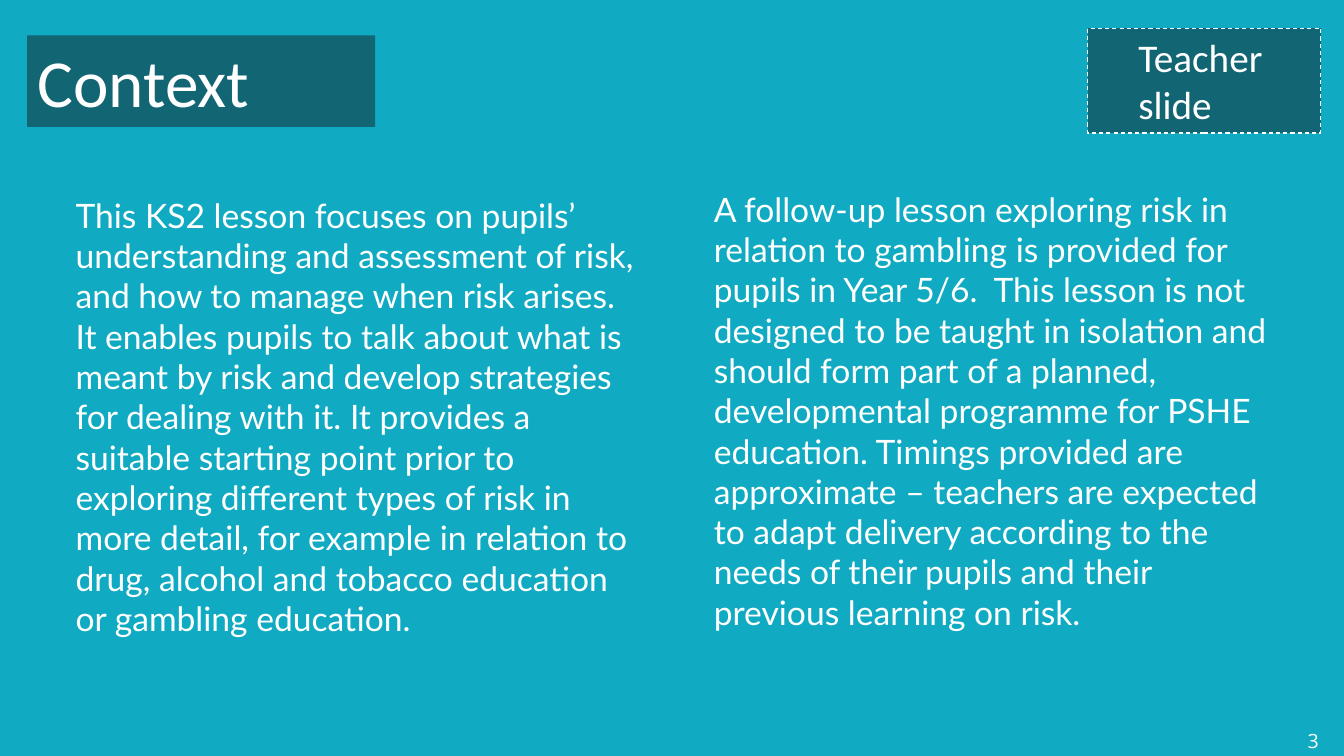
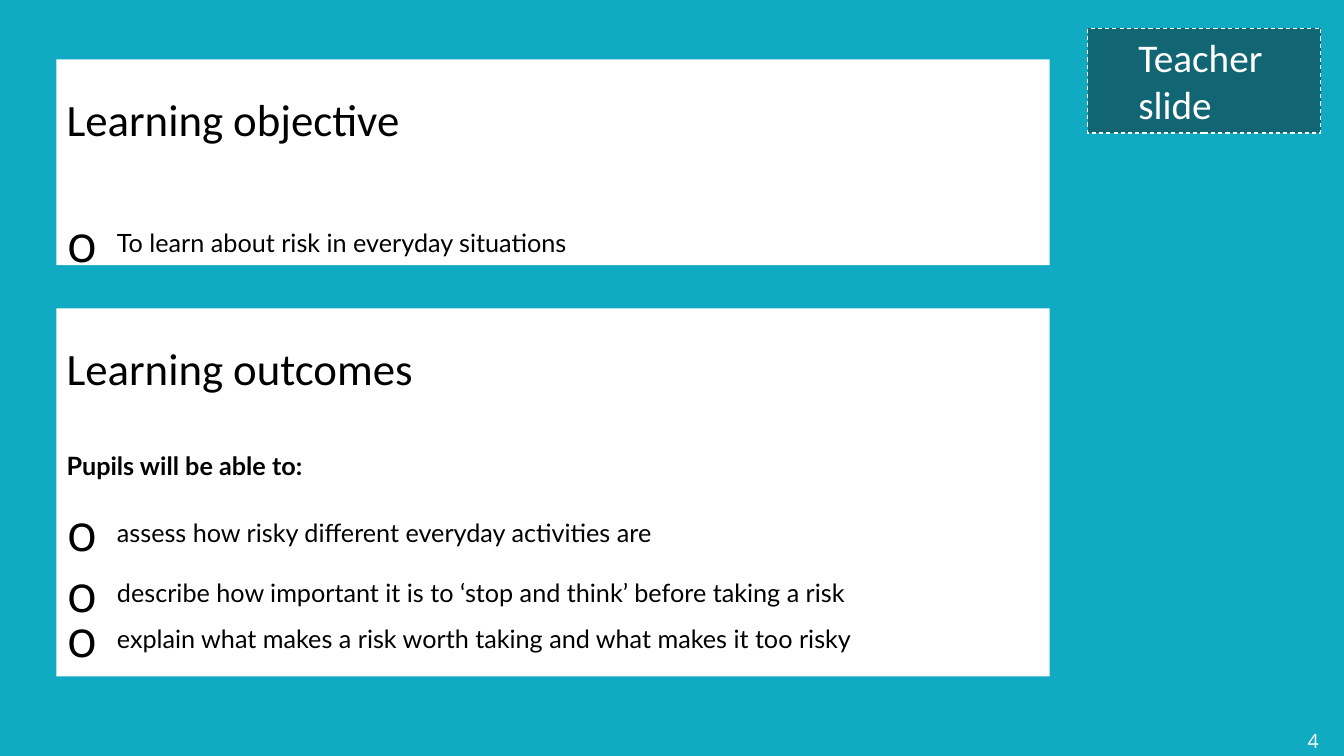
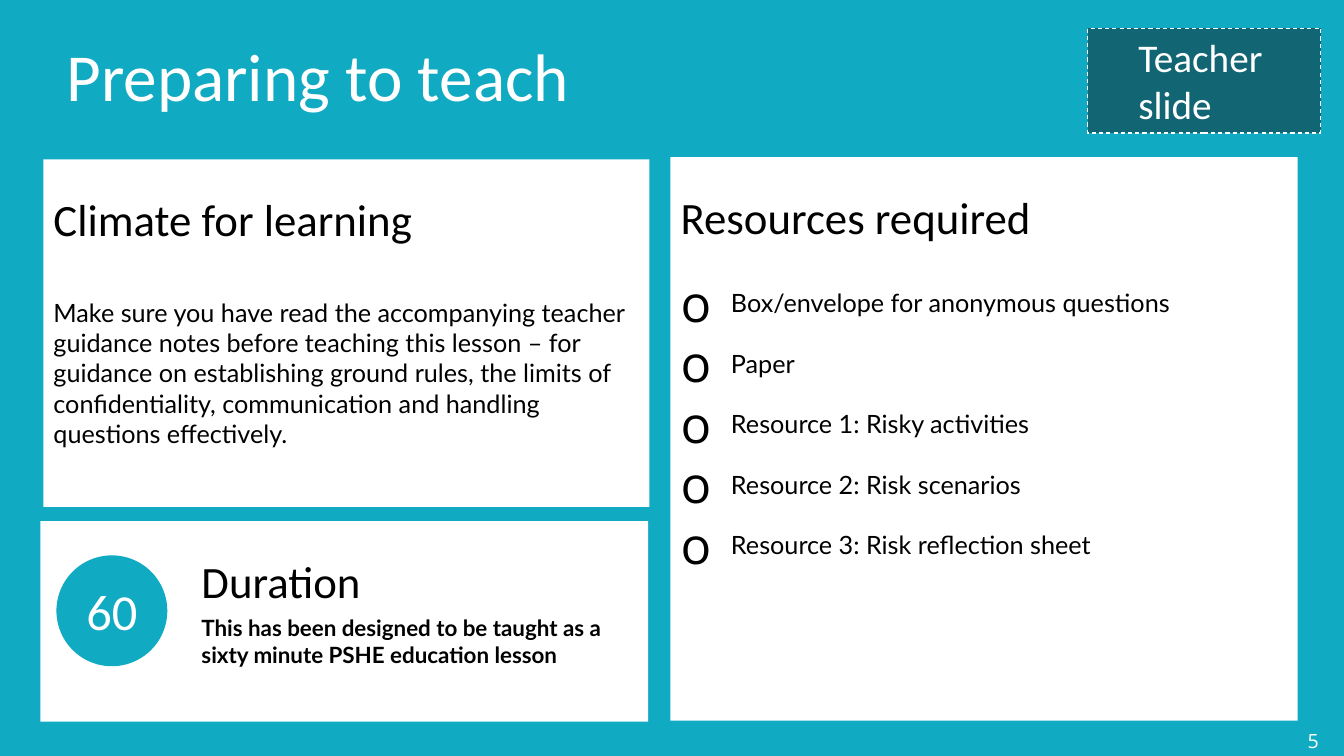
from dataclasses import dataclass

from lxml.etree import SubElement
from pptx import Presentation
from pptx.dml.color import RGBColor
from pptx.enum.dml import MSO_LINE
from pptx.enum.shapes import MSO_SHAPE
from pptx.enum.text import MSO_ANCHOR, MSO_AUTO_SIZE, PP_ALIGN
from pptx.oxml.ns import qn
from pptx.util import Inches, Pt

# Shared look
TEAL, DARK, WHITE, BLACK = "10AAC2", "126573", "FFFFFF", "000000"
HEAD, BODY, NUM = "Calibri", "Lato", "Open Sans"
TWO_COLS = 3  # layout with a title and two bodies


@dataclass
class Box:
    left: float
    top: float
    width: float
    height: float


@dataclass
class Para:
    text: str
    size: float = 18
    face: str = BODY
    color: str = BLACK
    bold: bool = False
    gap: float = 0  # points above
    lines: float = 1
    bullet: bool = False
    indent: float = 0
    align: PP_ALIGN = PP_ALIGN.LEFT


def rgb(code: str) -> RGBColor:
    return RGBColor.from_string(code)


def place(shape, box: Box) -> None:
    shape.left, shape.top = Inches(box.left), Inches(box.top)
    shape.width, shape.height = Inches(box.width), Inches(box.height)


def paint(shape, color: str) -> None:
    shape.fill.solid()
    shape.fill.fore_color.rgb = rgb(color)


def mark(para, item: Para) -> None:
    """Set the indent and the bullet of a paragraph."""
    props = para._p.get_or_add_pPr()
    left = 0.5 if item.bullet else item.indent
    props.set("marL", str(Inches(left)))
    props.set("indent", str(Inches(-0.5 if item.bullet else 0)))
    if item.bullet:
        SubElement(props, qn("a:buSzPct"), val="202000")
        SubElement(props, qn("a:buFont"), typeface=NUM)
        SubElement(props, qn("a:buChar"), char="o")
    else:
        SubElement(props, qn("a:buNone"))


def write(shape, items: list[Para], anchor=MSO_ANCHOR.TOP) -> None:
    frame = shape.text_frame
    frame.word_wrap = True
    frame.auto_size = MSO_AUTO_SIZE.NONE
    frame.vertical_anchor = anchor
    for i, item in enumerate(items):
        para = frame.add_paragraph() if i else frame.paragraphs[0]
        para.text = item.text
        mark(para, item)
        para.alignment = item.align
        para.line_spacing = item.lines
        para.space_before, para.space_after = Pt(item.gap), Pt(0)
        font = para.font
        font.name, font.size, font.bold = item.face, Pt(item.size), item.bold
        font.color.rgb = rgb(item.color)


def add_box(slide, kind: MSO_SHAPE, box: Box, color: str):
    shape = slide.shapes.add_shape(kind, 0, 0, 0, 0)
    place(shape, box)
    shape.shadow.inherit = False
    paint(shape, color)
    shape.line.fill.background()
    return shape


def set_title(slide, text: str, box: Box) -> None:
    place(slide.shapes.title, box)
    write(slide.shapes.title, [Para(text, 48, HEAD, WHITE)])


def set_panel(shape, box: Box, head: str, items: list[Para], indent: float = 0) -> None:
    """White panel with a heading above its text."""
    place(shape, box)
    paint(shape, WHITE)
    shape.text_frame.margin_top = Inches(0.32)
    write(shape, [Para(head, 32, HEAD, indent=indent), *items])


def new_slide(prs, number: int):
    """Slide with the teacher badge and its number."""
    slide = prs.slides.add_slide(prs.slide_layouts[TWO_COLS])
    badge = add_box(slide, MSO_SHAPE.RECTANGLE, Box(10.79, 0.28, 2.31, 1.04), DARK)
    badge.line.color.rgb = rgb(WHITE)
    badge.line.width = Pt(0.75)
    badge.line.dash_style = MSO_LINE.DASH
    badge.text_frame.margin_left = Inches(0.5)
    words = ("Teacher", "slide")
    write(badge, [Para(word, 28, HEAD, WHITE) for word in words], MSO_ANCHOR.MIDDLE)
    folio = slide.shapes.add_textbox(0, 0, 0, 0)
    place(folio, Box(12.87, 7.18, 0.46, 0.4))
    write(folio, [Para(str(number), 14, NUM, WHITE)])
    return slide


def add_context(prs) -> None:
    slide = new_slide(prs, 3)
    set_title(slide, "Context", Box(0.27, 0.35, 3.45, 0.91))
    paint(slide.shapes.title, DARK)
    texts = [
        (Box(0.65, 1.88, 5.74, 4.5),
         "This KS2 lesson focuses on pupils’ understanding and assessment of risk, "
         "and how to manage when risk arises.  It enables pupils to talk about what is "
         "meant by risk and develop strategies for dealing with it. It provides a "
         "suitable starting point prior to exploring different types of risk in more "
         "detail, for example in relation to drug, alcohol and tobacco education or "
         "gambling education."),
        (Box(6.98, 1.82, 5.81, 4.95),
         "A follow-up lesson exploring risk in relation to gambling is provided for  "
         "pupils in Year 5/6.  This lesson is not designed to be taught in isolation "
         "and should form part of a planned, developmental programme for PSHE "
         "education. Timings provided are approximate – teachers are expected to adapt "
         "delivery according to the needs of their pupils and their previous learning "
         "on risk."),
    ]
    for i, (box, text) in enumerate(texts, 1):
        body = slide.placeholders[i]
        place(body, box)
        write(body, [Para(text, 24, color=WHITE)])


def add_goals(prs) -> None:
    slide = new_slide(prs, 4)
    title = slide.shapes.title.element
    title.getparent().remove(title)
    set_panel(slide.placeholders[1], Box(0.56, 0.59, 9.85, 2.04), "Learning objective", [
        Para("To learn about risk in everyday situations", gap=37, lines=2, bullet=True),
    ])
    set_panel(slide.placeholders[2], Box(0.56, 3.06, 9.85, 3.65), "Learning outcomes", [
        Para("Pupils will be able to:", bold=True, gap=40),
        Para("assess how risky different everyday activities are", gap=26, bullet=True),
        Para("describe how important it is to ‘stop and think’ before taking a risk",
             lines=2, bullet=True),
        Para("explain what makes a risk worth taking and what makes it too risky",
             lines=1.5, bullet=True),
    ])


def add_plan(prs) -> None:
    slide = new_slide(prs, 5)
    set_title(slide, "Preparing to teach", Box(0.56, 0.29, 8.25, 0.91))
    set_panel(slide.placeholders[1], Box(0.43, 1.58, 6.01, 3.45), "Climate for learning", [
        Para("Make sure you have read the accompanying teacher guidance notes before "
             "teaching this lesson – for guidance on establishing ground rules, the "
             "limits of", gap=37),
        Para("confidentiality, communication and handling questions effectively."),
    ])
    needs = ["Box/envelope for anonymous questions", "Paper",
             "Resource 1: Risky activities", "Resource 2: Risk scenarios",
             "Resource 3: Risk reflection sheet"]
    set_panel(slide.placeholders[2], Box(6.65, 1.56, 6.22, 5.59), "Resources required", [
        Para(need, gap=0 if i else 10, lines=2, bullet=True)
        for i, need in enumerate(needs)
    ])
    # Duration panel and its minutes
    box = Box(0.4, 5.17, 6.03, 1.99)
    panel = add_box(slide, MSO_SHAPE.RECTANGLE, box, WHITE)
    set_panel(panel, box, "Duration", [
        Para("This has been designed to be taught as a sixty minute PSHE education "
             "lesson", 16, bold=True, gap=5, indent=1.5),
    ], indent=1.5)
    clock = add_box(slide, MSO_SHAPE.OVAL, Box(0.56, 5.51, 1.1, 1.1), TEAL)
    write(clock, [Para("60", 36, HEAD, WHITE, align=PP_ALIGN.CENTER)], MSO_ANCHOR.MIDDLE)


def main() -> None:
    prs = Presentation()
    prs.slide_width, prs.slide_height = Inches(13.33), Inches(7.5)
    paint(prs.slide_master.background, TEAL)
    for build in (add_context, add_goals, add_plan):
        build(prs)
    prs.save("out.pptx")


if __name__ == "__main__":
    main()
